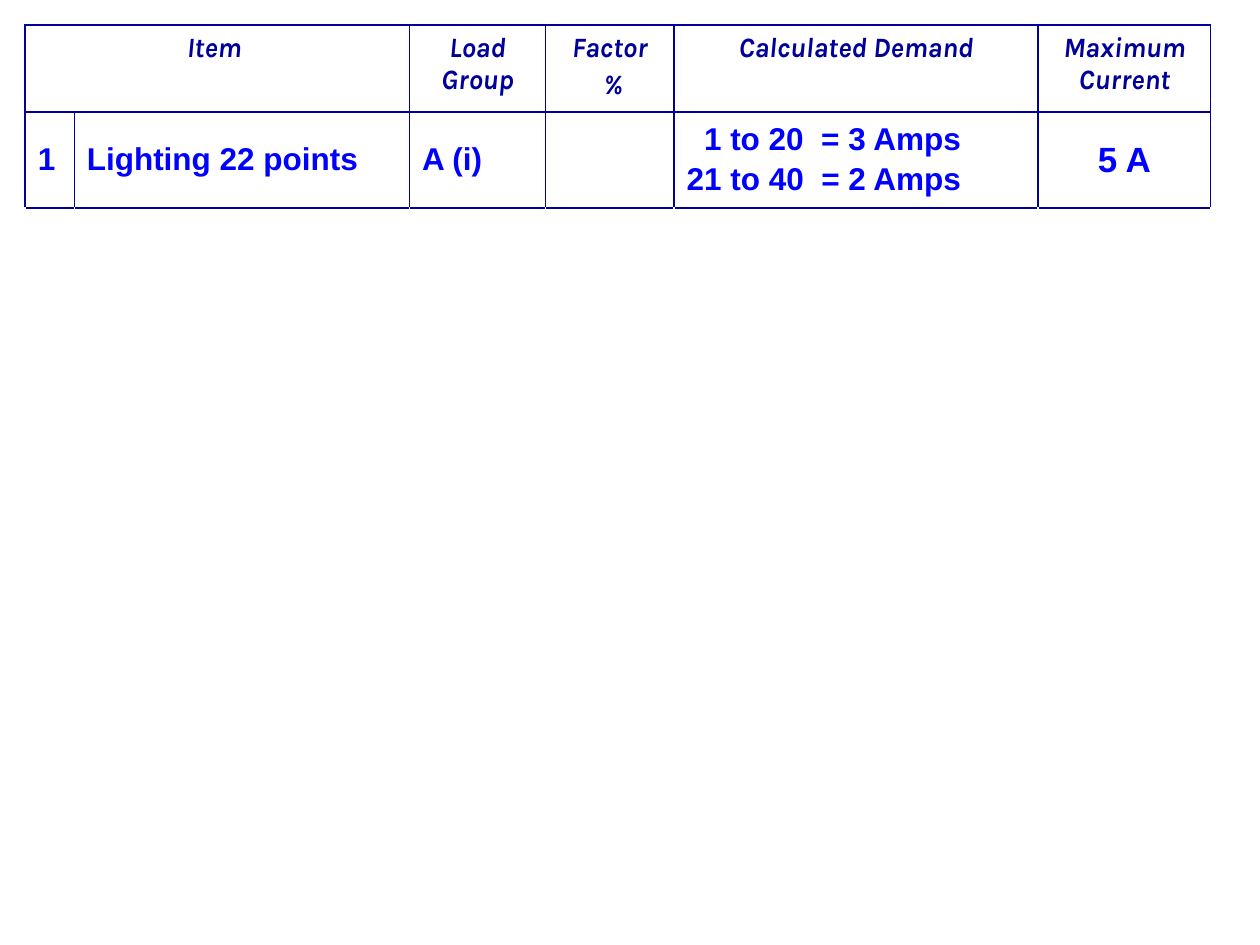
from dataclasses import dataclass

from lxml import etree
from pptx import Presentation
from pptx.dml.color import RGBColor
from pptx.enum.text import MSO_ANCHOR, PP_ALIGN
from pptx.oxml.ns import qn
from pptx.util import Inches, Pt

LEFT, CENTER = PP_ALIGN.LEFT, PP_ALIGN.CENTER
TOP, MIDDLE = MSO_ANCHOR.TOP, MSO_ANCHOR.MIDDLE
BLANK_LAYOUT = 6


@dataclass(frozen=True)
class Theme:
    header_font: str = "Karla"
    body_font: str = "Arial"
    header_color: str = "000099"
    body_color: str = "0000FF"
    grid_color: str = "010199"
    hidden_grid: str = "FFFFFF"
    header_size: int = 16
    body_size: int = 18
    result_size: int = 20
    grid_width: float = 1
    closing_width: float = 2.25
    space_before: float = 0.15  # share of the type size


THEME = Theme()

COLUMN_WIDTHS = [0.39, 2.66, 1.08, 1.02, 2.89, 1.37]
ROW_HEIGHTS = [0.69, 0.76] * 3 + [0.69, 0.81, 0.89]
HEADINGS = ["Item ", "", "Load Group", "Factor\n %", "Calculated Demand",
            "Maximum Current"]
LIGHTING = ["1", "Lighting 22 points", "A (i)", "",
            "  1 to 20  = 3 Amps\n21 to 40  = 2 Amps", "5 A"]


def write_cell(cell, text, font_name, size, color, italic=False,
               alignment=LEFT, anchor=TOP):
    cell.text = text
    cell.vertical_anchor = anchor
    for paragraph in cell.text_frame.paragraphs:
        paragraph.alignment = alignment
        paragraph.space_before = Pt(size * THEME.space_before)
        font = paragraph.font
        font.name, font.size = font_name, Pt(size)
        font.bold, font.italic = True, italic
        font.color.rgb = RGBColor.from_string(color)


def border_cell(cell, color, top=None, bottom_width=THEME.grid_width):
    properties = cell._tc.get_or_add_tcPr()
    for side in "LRTB":
        width = bottom_width if side == "B" else THEME.grid_width
        line = etree.SubElement(properties, qn(f"a:ln{side}"), w=str(Pt(width)))
        fill = etree.SubElement(line, qn("a:solidFill"))
        side_color = top if side == "T" and top else color
        etree.SubElement(fill, qn("a:srgbClr"), val=side_color)


def add_demand_table(slide):
    rows, columns = len(ROW_HEIGHTS), len(COLUMN_WIDTHS)
    table = slide.shapes.add_table(
        rows, columns, Inches(0.2), Inches(0.2),
        Inches(sum(COLUMN_WIDTHS)), Inches(sum(ROW_HEIGHTS))).table
    table.first_row = table.horz_banding = False
    for column, width in zip(table.columns, COLUMN_WIDTHS):
        column.width = Inches(width)
    for row, height in zip(table.rows, ROW_HEIGHTS):
        row.height = Inches(height)
    return table


def rule_table(table):
    last = len(ROW_HEIGHTS) - 1
    for index, row in enumerate(table.rows):
        for cell in row.cells:
            if index < 2:
                border_cell(cell, THEME.grid_color)
            else:
                border_cell(
                    cell, THEME.hidden_grid,
                    top=THEME.grid_color if index == 2 else None,
                    bottom_width=(THEME.closing_width if index == last
                                  else THEME.grid_width))
            cell.fill.background()
    # Heading over number and item, and the closing row
    table.cell(0, 0).merge(table.cell(0, 1))
    table.cell(last, 0).merge(table.cell(last, 4))


def fill_table(table):
    result_column = len(COLUMN_WIDTHS) - 1
    for column, (heading, entry) in enumerate(zip(HEADINGS, LIGHTING)):
        if heading:
            write_cell(table.cell(0, column), heading, THEME.header_font,
                       THEME.header_size, THEME.header_color,
                       italic=True, alignment=CENTER)
        if entry:
            is_result = column == result_column
            write_cell(table.cell(1, column), entry, THEME.body_font,
                       THEME.result_size if is_result else THEME.body_size,
                       THEME.body_color,
                       alignment=CENTER if is_result else LEFT,
                       anchor=MIDDLE)


def main():
    presentation = Presentation()
    presentation.slide_width = Inches(10)
    presentation.slide_height = Inches(7.5)
    slide = presentation.slides.add_slide(
        presentation.slide_layouts[BLANK_LAYOUT])

    # Maximum demand table: headings, lighting load, rows still to fill
    demand_table = add_demand_table(slide)
    rule_table(demand_table)
    fill_table(demand_table)

    presentation.save("out.pptx")


if __name__ == "__main__":
    main()
